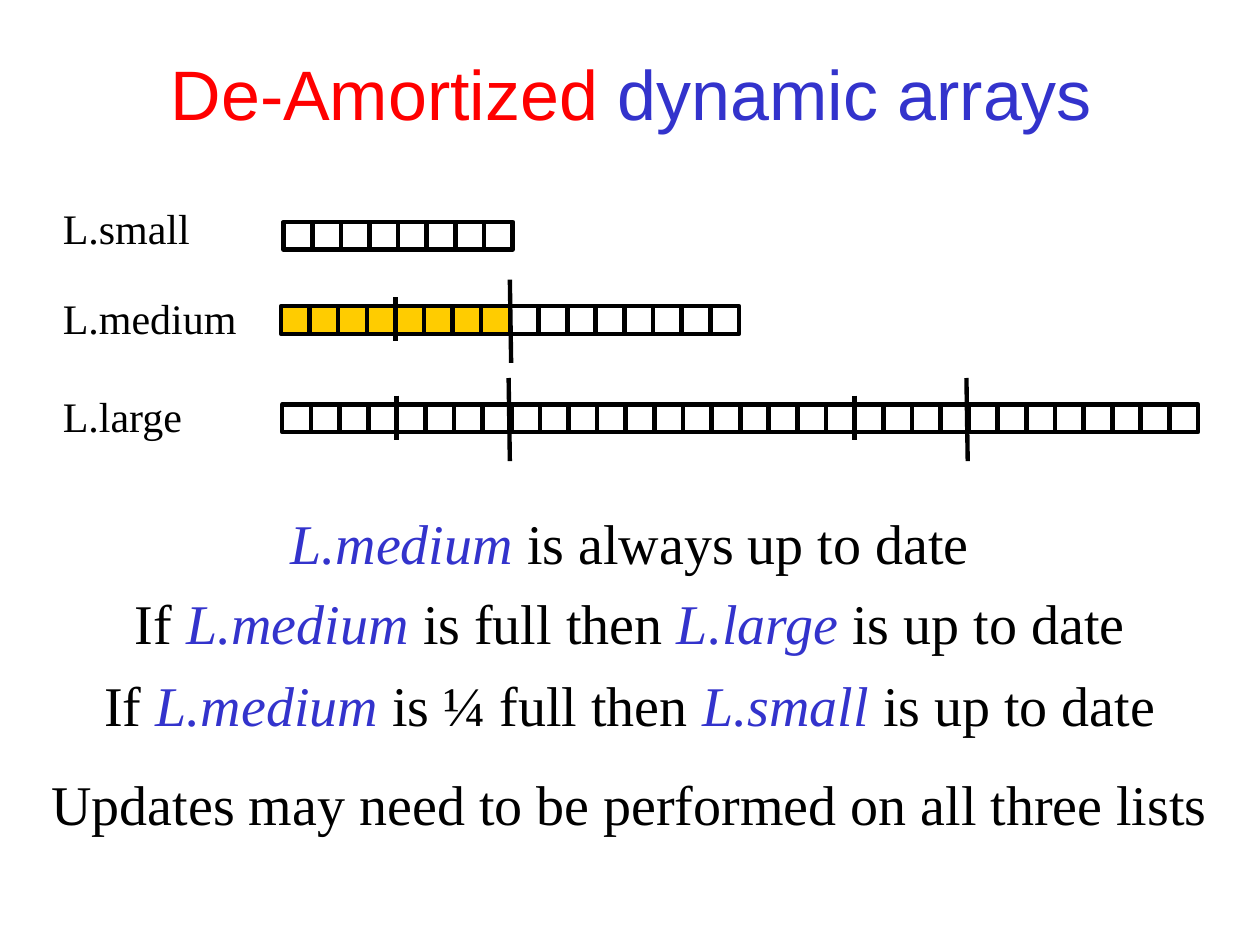
from lxml import etree
from pptx import Presentation
from pptx import util as u
from pptx.dml.color import RGBColor
from pptx.enum import shapes, text
from pptx.oxml.ns import qn

BLACK, BLUE, RED, GOLD = "000000", "3333CC", "FF0000", "FFCC00"
PITCH = 7.04 / 31
CELL_W, CELL_H = 0.23, 0.22
LINE_W = 2.5

TITLE = dict(name="Arial", size=u.Pt(40))
LABEL = dict(name="Times New Roman", size=u.Pt(24))
BODY = dict(name="Times New Roman", size=u.Pt(32), italic=False)
NAME = dict(BODY, italic=True)

# label, label top, left, top, cells, filled cells, quarter marks, half marks, half mark shift
ARRAYS = [
    ("L.small", 1.56, 2.25, 1.76, 8, 0, [], [], 0),
    ("L.medium", 2.27, 2.23, 2.43, 16, 8, [4], [8], 0),
    ("L.large", 3.05, 2.24, 3.21, 32, 0, [4, 20], [8, 24], -0.02),
]

STATEMENTS = [
    (3.99, [("L.medium", NAME, BLUE), (" is always up to date", BODY, BLACK)]),
    (4.62, [("If ", BODY, BLACK), ("L.medium ", NAME, BLUE), ("is full then ", BODY, BLACK),
            ("L.large ", NAME, BLUE), ("is up to date", BODY, BLACK)]),
    (5.27, [("If ", BODY, BLACK), ("L.medium ", NAME, BLUE), ("is ¼ full then ", BODY, BLACK),
            ("L.small ", NAME, BLUE), ("is up to date", BODY, BLACK)]),
    (6.06, [("Updates may need to be performed on all three lists", BODY, BLACK)]),
]


def paint(color, value):
    """Set a colour format from a hex string."""
    color.rgb = RGBColor.from_string(value)


def add_runs(p, runs):
    """Append formatted runs to a paragraph."""
    for words, fmt, color in runs:
        r = p.add_run()
        r.text = words
        for key, value in fmt.items():
            setattr(r.font, key, value)
        paint(r.font.color, color)


def set_title(s, runs):
    """Place and fill the title placeholder."""
    sp = s.shapes.title
    sp.left, sp.top, sp.width, sp.height = map(u.Inches, (0.01, 0.3, 10, 0.87))
    tf = sp.text_frame
    tf.vertical_anchor = text.MSO_ANCHOR.MIDDLE
    p = tf.paragraphs[0]
    p.alignment = text.PP_ALIGN.CENTER
    add_runs(p, runs)


def add_text(s, box, runs, align=text.PP_ALIGN.LEFT):
    """Add a one-paragraph text box."""
    tf = s.shapes.add_textbox(*map(u.Inches, box)).text_frame
    tf.word_wrap = True
    tf.auto_size = text.MSO_AUTO_SIZE.SHAPE_TO_FIT_TEXT
    p = tf.paragraphs[0]
    p.alignment = align
    add_runs(p, runs)


def add_cell(s, left, top, fill=None):
    """Add one array cell, hollow unless a fill is given."""
    box = map(u.Inches, (left, top, CELL_W, CELL_H))
    sp = s.shapes.add_shape(shapes.MSO_SHAPE.RECTANGLE, *box)
    sp.shadow.inherit = False
    if fill:
        sp.fill.solid()
        paint(sp.fill.fore_color, fill)
    else:
        sp.fill.background()
    paint(sp.line.color, BLACK)
    sp.line.width = u.Pt(LINE_W)


def add_mark(s, x1, y1, x2, y2):
    """Add a straight divider line."""
    ends = map(u.Inches, (x1, y1, x2, y2))
    line = s.shapes.add_connector(shapes.MSO_CONNECTOR.STRAIGHT, *ends)
    paint(line.line.color, BLACK)
    line.line.width = u.Pt(LINE_W)
    etree.SubElement(line._element.spPr, qn("a:effectLst"))


def add_array(s, label, label_top, left, top, cells, filled, quarters, halves, shift):
    """Add a labelled row of cells with its divider lines."""
    add_text(s, (0.4, label_top, 1.72, 0.5), [(label, LABEL, BLACK)])
    for i in range(cells):
        add_cell(s, left + i * PITCH, top, GOLD if i < filled else None)
    for i in halves:
        x = left + i * PITCH + shift
        add_mark(s, x, top - 0.21, x + 0.01, top + 0.45)
    for i in quarters:
        x = left + i * PITCH
        add_mark(s, x, top - 0.07, x, top + 0.28)


def main():
    """Build and save the slide."""
    prs = Presentation()
    prs.slide_width, prs.slide_height = u.Inches(10), u.Inches(7.5)
    s = prs.slides.add_slide(prs.slide_layouts[5])
    set_title(s, [("De-Amortized ", TITLE, RED), ("dynamic arrays", TITLE, BLUE)])
    for array in ARRAYS:
        add_array(s, *array)
    for top, runs in STATEMENTS:
        add_text(s, (0, top, 10, 0.64), runs, text.PP_ALIGN.CENTER)
    prs.save("out.pptx")


if __name__ == "__main__":
    main()
